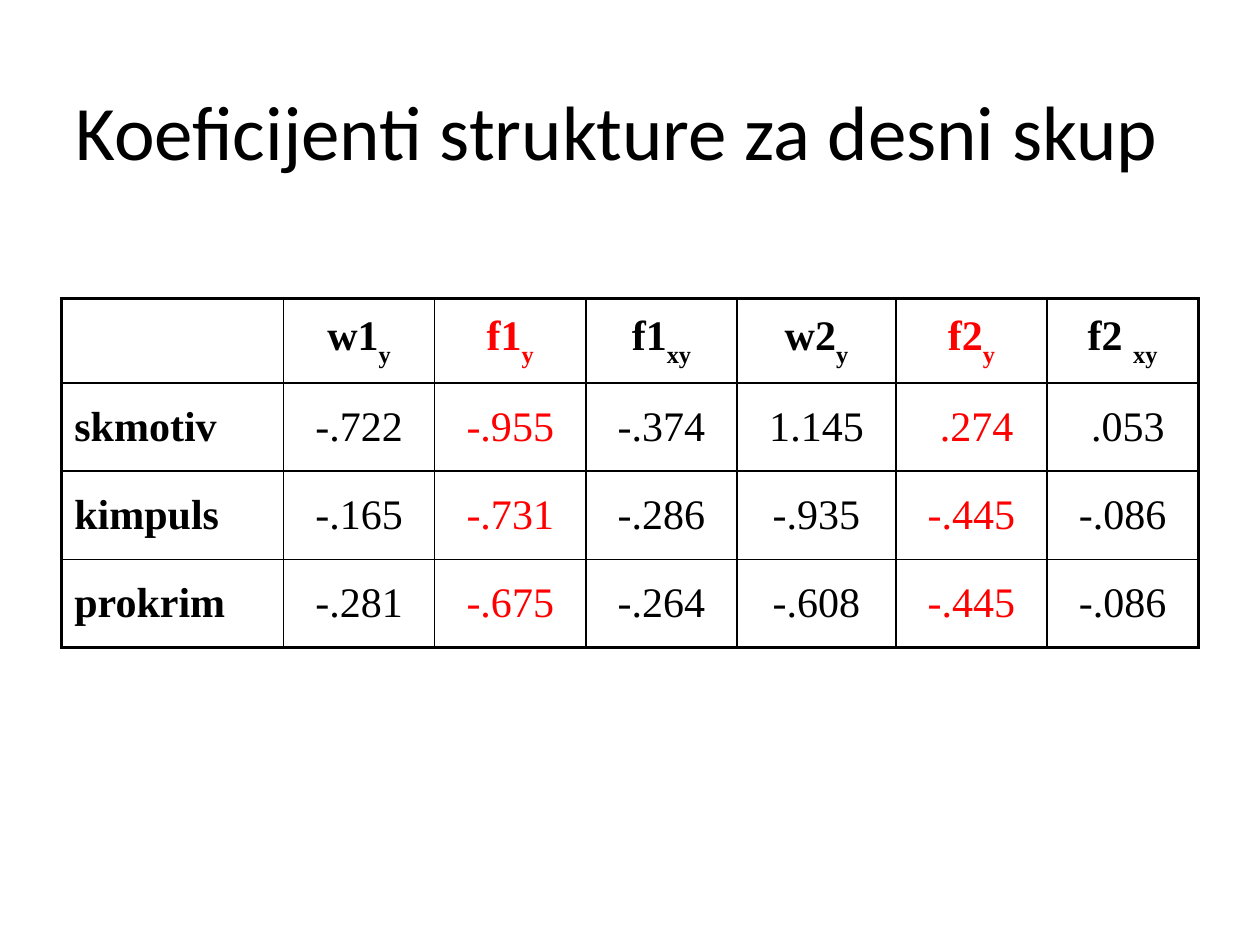
from dataclasses import dataclass

from lxml.etree import SubElement
from pptx import Presentation
from pptx.dml.color import RGBColor
from pptx.enum.text import MSO_ANCHOR, PP_ALIGN
from pptx.oxml.ns import qn
from pptx.table import Table, _Cell
from pptx.text.text import _Paragraph
from pptx.util import Inches, Pt

BLACK = RGBColor(0, 0, 0)
RED = RGBColor(255, 0, 0)
WHITE = RGBColor(255, 255, 255)

TITLE_FORMAT = {"name": "Calibri", "size": Pt(44), "bold": False}
LABEL_FORMAT = {"name": "Times New Roman", "size": Pt(24), "bold": True}
VALUE_FORMAT = LABEL_FORMAT | {"bold": False}

COLUMN_WIDTHS = [1.76, 1.2, 1.2, 1.2, 1.26, 1.2, 1.2]
ROW_HEIGHTS = [0.67, 0.7, 0.7, 0.7]
THIN, THICK = Pt(1), Pt(2)


@dataclass(frozen=True)
class Coefficient:
    name: str
    subscript: str
    values: tuple[str, ...]
    color: RGBColor = BLACK


VARIABLES = ["skmotiv", "kimpuls", "prokrim"]
COEFFICIENTS = [
    Coefficient("w1", "y", ("-.722", "-.165", "-.281")),
    Coefficient("f1", "y", ("-.955", "-.731", "-.675"), RED),
    Coefficient("f1", "xy", ("-.374", "-.286", "-.264")),
    Coefficient("w2", "y", ("1.145", "-.935", "-.608")),
    Coefficient("f2", "y", (" .274", "-.445", "-.445"), RED),
    Coefficient("f2 ", "xy", (" .053", "-.086", "-.086")),
]


def add_span(para: _Paragraph, text: str, formats: dict, color: RGBColor = BLACK,
             baseline: int = 0) -> None:
    span = para.add_run()
    span.text = text
    for name, value in formats.items():
        setattr(span.font, name, value)
    span.font.color.rgb = color
    if baseline:
        span.font._element.set("baseline", str(baseline))


def draw_border(cell: _Cell, side: str, width: int) -> None:
    properties = cell._tc.get_or_add_tcPr()
    line = SubElement(properties, qn(f"a:ln{side}"), w=str(width))
    fill = SubElement(line, qn("a:solidFill"))
    SubElement(fill, qn("a:srgbClr"), val=str(BLACK))


def style_cells(table: Table) -> None:
    last_row, last_column = len(table.rows) - 1, len(table.columns) - 1
    for row in range(last_row + 1):
        for column in range(last_column + 1):
            cell = table.cell(row, column)
            outer_sides = {"L": column == 0, "R": column == last_column,
                           "T": row == 0, "B": row == last_row}
            for side, is_outer in outer_sides.items():
                draw_border(cell, side, THICK if is_outer else THIN)
            cell.fill.solid()
            cell.fill.fore_color.rgb = WHITE
            cell.vertical_anchor = MSO_ANCHOR.MIDDLE
            if column:
                cell.text_frame.paragraphs[0].alignment = PP_ALIGN.CENTER


def fill_cells(table: Table) -> None:
    for row, variable in enumerate(VARIABLES, 1):
        add_span(table.cell(row, 0).text_frame.paragraphs[0], variable, LABEL_FORMAT)
    for column, item in enumerate(COEFFICIENTS, 1):
        heading = table.cell(0, column).text_frame.paragraphs[0]
        add_span(heading, item.name, LABEL_FORMAT, item.color)
        add_span(heading, item.subscript, LABEL_FORMAT, item.color, -30000)
        for row, value in enumerate(item.values, 1):
            para = table.cell(row, column).text_frame.paragraphs[0]
            add_span(para, value, VALUE_FORMAT, item.color)


def main() -> None:
    deck = Presentation()
    deck.slide_width, deck.slide_height = Inches(10), Inches(7.5)
    page = deck.slides.add_slide(deck.slide_layouts[6])

    box = page.shapes.add_textbox(Inches(0.5), Inches(0.32), Inches(9), Inches(1.51))
    box.text_frame.word_wrap = True
    box.text_frame.vertical_anchor = MSO_ANCHOR.MIDDLE
    title = box.text_frame.paragraphs[0]
    title.line_spacing = 0.9
    add_span(title, "Koeficijenti strukture za desni skup", TITLE_FORMAT)

    table = page.shapes.add_table(
        len(ROW_HEIGHTS), len(COLUMN_WIDTHS), Inches(0.49), Inches(2.37),
        Inches(sum(COLUMN_WIDTHS)), Inches(sum(ROW_HEIGHTS))).table
    table.first_row = table.horz_banding = False
    for column, width in zip(table.columns, COLUMN_WIDTHS):
        column.width = Inches(width)
    for row, height in zip(table.rows, ROW_HEIGHTS):
        row.height = Inches(height)
    style_cells(table)
    fill_cells(table)

    deck.save("out.pptx")


if __name__ == "__main__":
    main()
